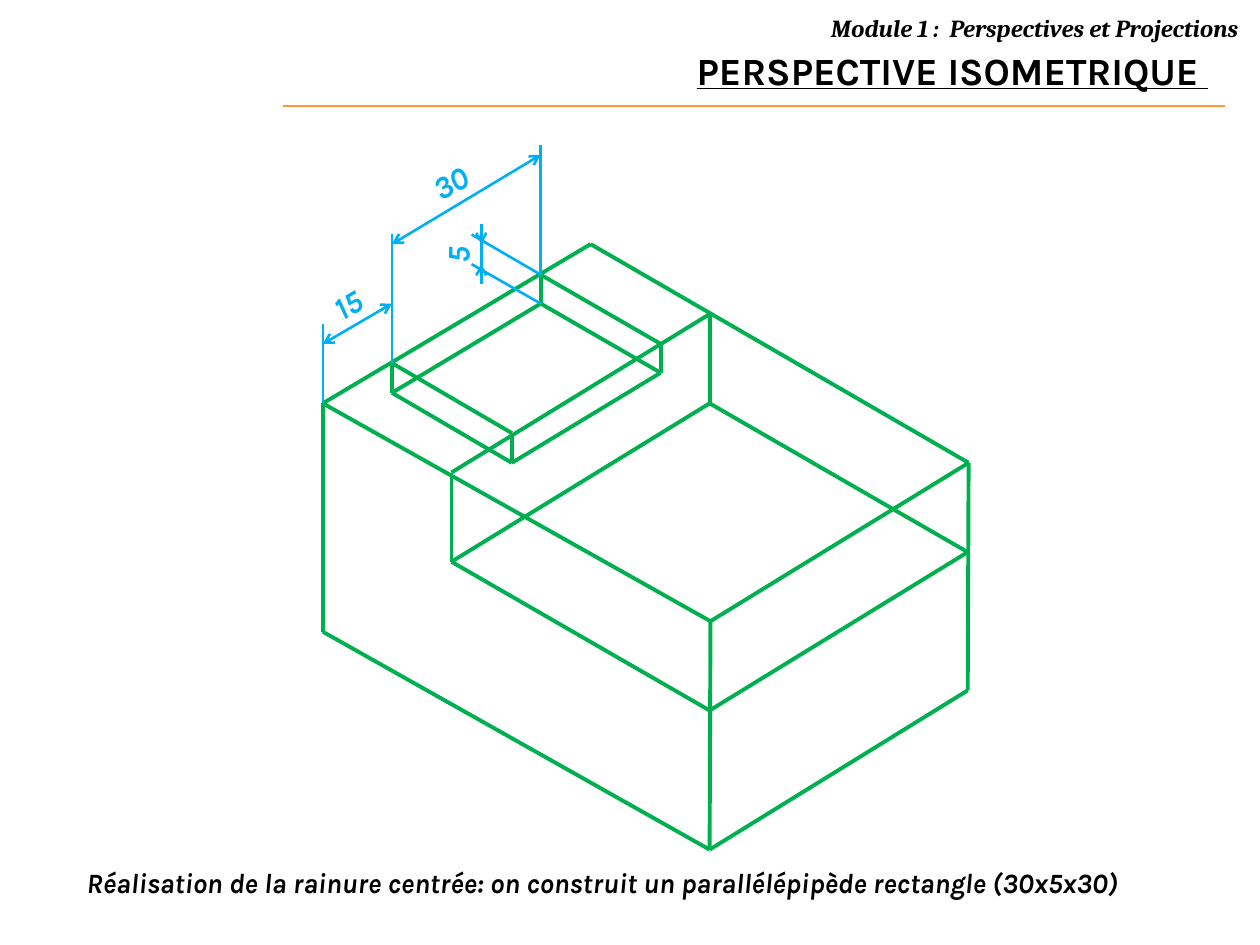
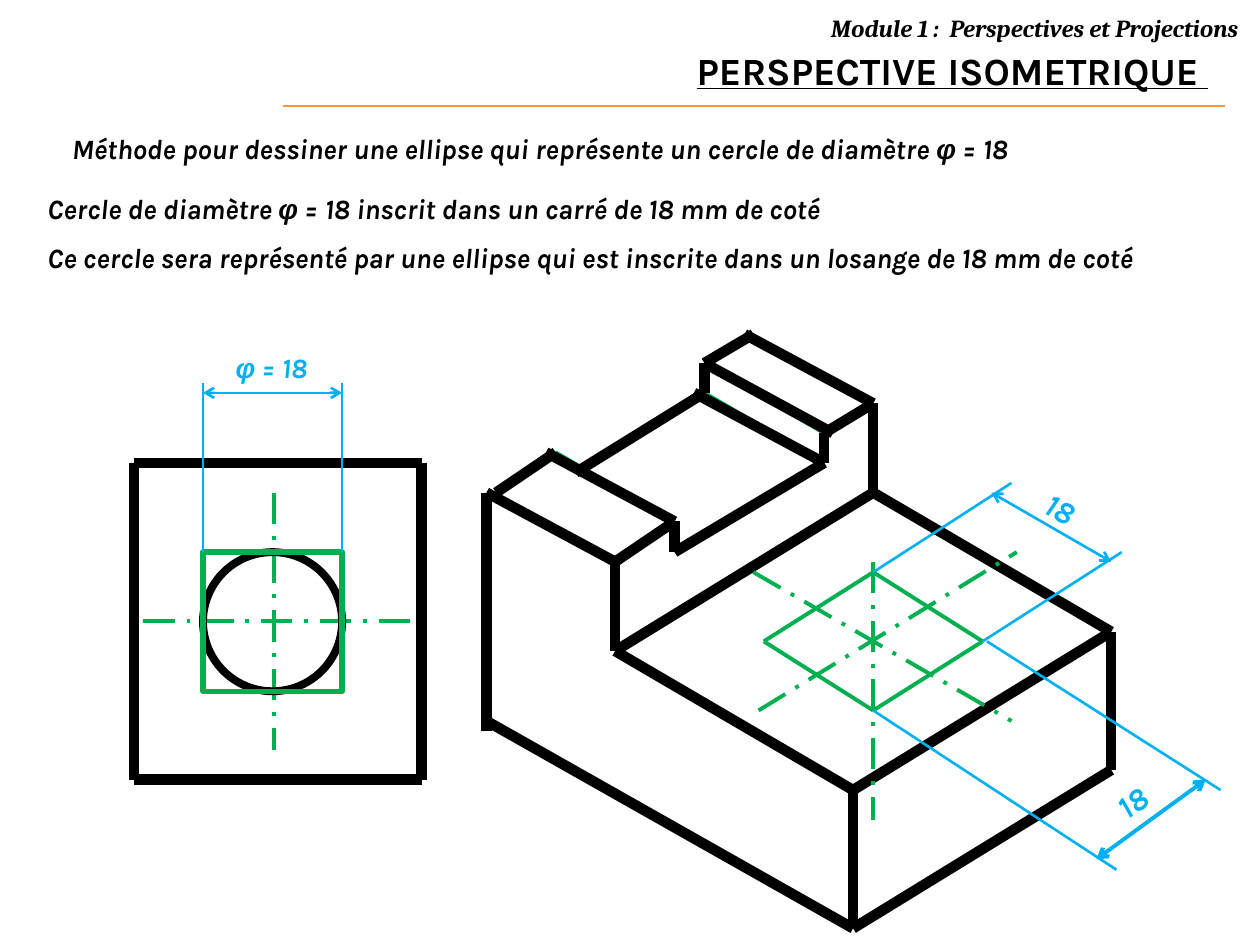
"""Build two slides on isometric perspective drawing."""
from dataclasses import dataclass
from itertools import groupby, pairwise

from lxml import etree
from pptx import Presentation
from pptx.dml.color import RGBColor
from pptx.enum.dml import MSO_LINE
from pptx.enum.shapes import MSO_CONNECTOR, MSO_SHAPE
from pptx.enum.text import MSO_ANCHOR, MSO_AUTO_SIZE, PP_ALIGN
from pptx.oxml.ns import qn
from pptx.util import Pt

STRAIGHT = MSO_CONNECTOR.STRAIGHT
RECT, CIRCLE = MSO_SHAPE.RECTANGLE, MSO_SHAPE.FLOWCHART_CONNECTOR
DASH_DOT = MSO_LINE.LONG_DASH_DOT
TOP, NO_FIT = MSO_ANCHOR.TOP, MSO_AUTO_SIZE.NONE
LEFT, RIGHT = PP_ALIGN.LEFT, PP_ALIGN.RIGHT
TITLE_ONLY = 5

BLACK, WHITE, ORANGE = "000000", "FFFFFF", "FF9933"
GREEN, BLUE = "00B050", "00B0F0"
BODY_FONT, HEADER_FONT, GREEK_FONT = "Karla", "Cambria", "Arial"
ONE_END, BOTH_ENDS = ("tailEnd",), ("headEnd", "tailEnd")


@dataclass(frozen=True)
class Path:
    """A chain of straight edges through points given in points."""
    points: tuple
    color: str = GREEN
    width: float = 2.25
    dash: object = None
    arrows: tuple = ()


@dataclass(frozen=True)
class Label:
    """A line of bold italic text in a box that may be turned."""
    text: str
    box: tuple
    size: float = 16
    color: str = BLACK
    rotation: float = 0


def rgb(color: str) -> RGBColor:
    """Return the colour for a hex string."""
    return RGBColor.from_string(color)


def place(sp, box: tuple) -> None:
    """Move a shape to a box of left, top, width and height."""
    sp.left, sp.top, sp.width, sp.height = map(Pt, box)


def write(sp, text: str, *, font: str = BODY_FONT, size: float = 16, color: str = BLACK,
          italic: bool = True, underline: bool = False, align=LEFT) -> None:
    """Write one formatted paragraph, with Greek letters in their own font."""
    tf = sp.text_frame
    tf.word_wrap = True
    tf.auto_size = NO_FIT
    tf.vertical_anchor = TOP
    p = tf.paragraphs[0]
    p.alignment = align
    for greek, chars in groupby(text, lambda c: c == "φ"):
        r = p.add_run()
        r.text = "".join(chars)
        r.font.name = GREEK_FONT if greek else font
        r.font.size = Pt(size)
        r.font.bold = True
        r.font.italic = italic
        r.font.underline = underline
        r.font.color.rgb = rgb(color)


def draw_path(s, path: Path) -> None:
    """Draw every edge of a path as a connector."""
    for start, end in pairwise(path.points):
        sp = s.shapes.add_connector(STRAIGHT, *map(Pt, start + end))
        sp.line.color.rgb = rgb(path.color)
        sp.line.width = Pt(path.width)
        if path.dash:
            sp.line.dash_style = path.dash
        ln = sp.line._get_or_add_ln()
        for end_name in path.arrows:
            etree.SubElement(ln, qn(f"a:{end_name}"), type="arrow")
        etree.SubElement(ln.getparent(), qn("a:effectLst"))


def draw_label(s, label: Label) -> None:
    """Add a text box for a label."""
    sp = s.shapes.add_textbox(*map(Pt, label.box))
    sp.rotation = label.rotation
    write(sp, label.text, size=label.size, color=label.color)


def draw_outline(s, kind, box: tuple, color: str, width: float) -> None:
    """Add an unfilled preset shape."""
    sp = s.shapes.add_shape(kind, *map(Pt, box))
    sp.shadow.inherit = False
    sp.fill.background()
    sp.line.color.rgb = rgb(color)
    sp.line.width = Pt(width)


def dimension(text: str, left: float, top: float, rotation: float) -> Label:
    """Return a turned blue dimension figure."""
    return Label(text, (left, top, 46, 34), 18, BLUE, rotation)


def blue(*points: tuple, width: float = 1.5, arrows: tuple = ()) -> Path:
    """Return a dimension or extension line."""
    return Path(points, BLUE, width, arrows=arrows)


def green(*points: tuple) -> Path:
    """Return a construction line."""
    return Path(points)


def thick(*points: tuple) -> Path:
    """Return a heavy black edge."""
    return Path(points, BLACK, 6)


def axis(*points: tuple) -> Path:
    """Return a dash-dot centre line."""
    return Path(points, dash=DASH_DOT)


def add_slide(prs):
    """Add a slide with the shared header, rule and title."""
    s = prs.slides.add_slide(prs.slide_layouts[TITLE_ONLY])
    draw_path(s, Path(((161.5, 60.5), (700, 60.5)), ORANGE, 1.5))
    sp = s.shapes.add_shape(RECT, *map(Pt, (269.5, 1.5, 445.5, 24.5)))
    sp.shadow.inherit = False
    sp.fill.solid()
    sp.fill.fore_color.rgb = rgb(WHITE)
    sp.line.fill.background()
    write(sp, "Module 1 :  Perspectives et Projections", font=HEADER_FONT, size=14, align=RIGHT)
    p = sp.text_frame.paragraphs[0]
    p.line_spacing = 1.15
    p.space_after = Pt(10)
    place(s.shapes.title, (144.5, 23.5, 553, 84))
    write(s.shapes.title, "PERSPECTIVE ISOMETRIQUE ", size=22, italic=False,
          underline=True, align=RIGHT)
    return s


def build_groove_slide(prs) -> None:
    """Show the construction of the centred groove."""
    s = add_slide(prs)
    west, north, east, south = (184.5, 230.5), (337.5, 139.5), (553.5, 264.5), (406, 355)
    west_base, south_base, east_base = (184.5, 361), (405.5, 485.5), (553, 394.5)
    step_front, step_back = (258, 270), (405.5, 179.5)
    floor_front, floor_back = (258, 321), (405.5, 230.5)
    floor_south, floor_east = (405.5, 406), (553, 315.5)
    rim_w, rim_n, rim_e, rim_s = (224, 207.5), (309, 157), (377.5, 196.5), (292.5, 247.5)
    bed_w, bed_n, bed_e, bed_s = (224, 224.5), (309, 173.5), (377.5, 213), (292.5, 264.5)
    paths = [
        green(west, north, east, south, west),
        green(west, west_base, south_base, east_base, east),
        green(south, south_base),
        green(step_front, step_back, floor_back, floor_front, step_front),
        green(floor_front, floor_south, floor_east, floor_back),
        green(bed_e, bed_s, bed_w, bed_n, bed_e),
        green(bed_w, rim_w, rim_s, bed_s),
        green(bed_e, rim_e, rim_n, bed_n),
        blue((184.5, 185), west),
        blue((224, 134), rim_w),
        blue((309, 83), rim_n),
        blue(rim_n, (269.5, 134)),
        blue(bed_n, (269.5, 151)),
        blue((224, 139.5), (309, 88.5), arrows=BOTH_ENDS),
        blue((184.5, 196.5), (224, 173.5), arrows=BOTH_ENDS),
        blue((275, 128), (275, 162)),
        blue((275, 128), (275, 139.5), arrows=ONE_END),
        blue((275, 162), (275, 151), arrows=ONE_END),
    ]
    labels = [
        dimension("30", 240.5, 86.5, 329.9),
        dimension("15", 184.5, 155, 329.9),
        Label("5", (246, 123, 35.5, 34), 18, BLUE, 270),
        Label("Réalisation de la rainure centrée: on construit un parallélépipède "
              "rectangle (30x5x30)", (42.5, 491, 700, 42)),
    ]
    for path in paths:
        draw_path(s, path)
    for label in labels:
        draw_label(s, label)


def build_ellipse_slide(prs) -> None:
    """Show the circle in its square and the matching rhombus."""
    s = add_slide(prs)
    west, west_mid, step_top, step_foot = (278, 281.5), (278, 412), (351.5, 321), (351.5, 372)
    back_top, back_foot = (499, 230.5), (499, 281.5)
    south, south_base, east, east_base = (487.5, 451.5), (487.5, 530.5), (635, 361), (635, 440)
    rim_s, bed_s, rim_e, bed_e = (385.5, 298), (385.5, 315.5), (471, 247.5), (471, 264.5)
    rim_n, bed_n = (402.5, 207.5), (402.5, 224.5)
    rhomb_n, rhomb_e, rhomb_s, rhomb_w = (499, 327), (561.5, 366.5), (499, 406), (436.5, 366.5)
    face_left, face_top, face_right, face_bottom = 76.5, 264.5, 241, 445.5
    square_left, square_top, side = 116, 315.5, 79.5
    square_right = square_left + side
    square = (square_left, square_top, side, side)
    solid = [
        green(step_foot, back_foot, back_top),
        green(step_top, step_foot),
        green(west, west_mid),
        green(rim_s, bed_s, bed_e, rim_e, rim_n, bed_n, bed_e),
        green(rim_s, (317.5, 258.5)),
        thick(south_base, south, east, east_base, south_base),
        thick(south, step_foot, back_foot, east),
        thick(south_base, west_mid),
        thick(west, (278, 417.5)),
        thick(west, step_top, step_foot),
        thick(step_top, rim_s, bed_s, bed_e, rim_e, back_top, back_foot),
        thick((283.5, 281.5), (317.5, 258.5)),
        thick(rim_s, (312, 258.5)),
        thick((476, 247.5), rim_n, (430.5, 191)),
        thick(back_top, (425.5, 191)),
        thick(bed_e, (396.5, 224.5)),
        thick(rim_n, bed_n, (329, 270)),
        thick((face_left, face_top), (face_right, face_top)),
        thick((face_left, face_bottom), (face_right, face_bottom)),
        thick((face_left, face_top), (face_left, face_bottom)),
        thick((face_right, face_top), (face_right, face_bottom)),
        axis((156.5, 281.5), (156.5, 428.5)),
        axis((82, 355), (235.5, 355)),
    ]
    construction = [
        axis((430.5, 327), (578, 412)),
        axis((433.5, 406), (581, 315.5)),
        axis((499, 321), (499, 468.5)),
        green(rhomb_n, rhomb_e, rhomb_s, rhomb_w, rhomb_n),
        blue((square_left, 219), (square_left, square_top)),
        blue((square_right, 219), (square_right, square_top)),
        blue((square_left, 224.5), (square_right, 224.5), arrows=BOTH_ENDS),
        blue((578, 276), rhomb_n),
        blue((641, 315.5), rhomb_e),
        blue((635, 321), (566.5, 281.5), arrows=BOTH_ENDS),
        blue((638, 497), rhomb_s),
        blue((697.5, 451.5), (564, 366.5)),
        blue((689, 445.5), (626.5, 491), width=2.25, arrows=BOTH_ENDS),
    ]
    labels = [
        Label("Méthode pour dessiner une ellipse qui représente un cercle de diamètre φ = 18",
              (34, 71.5, 686, 51)),
        Label("Cercle de diamètre φ = 18 inscrit dans un carré de 18 mm de coté",
              (20, 106, 700, 39.5)),
        Label("Ce cercle sera représenté par une ellipse qui est inscrite dans un losange "
              "de 18 mm de coté", (20, 134, 700, 34)),
        Label("φ = 18", (127.5, 196.5, 65, 27.5), color=BLUE),
        dimension("18", 589, 279.5, 29.3),
        dimension("18", 632, 439, 325),
    ]
    for path in solid:
        draw_path(s, path)
    draw_outline(s, CIRCLE, square, BLACK, 4.5)
    draw_outline(s, RECT, square, GREEN, 3)
    for path in construction:
        draw_path(s, path)
    for label in labels:
        draw_label(s, label)


def main() -> None:
    """Build and save the presentation."""
    prs = Presentation()
    prs.slide_width, prs.slide_height = Pt(720), Pt(540)
    build_groove_slide(prs)
    build_ellipse_slide(prs)
    prs.save("out.pptx")


if __name__ == "__main__":
    main()
